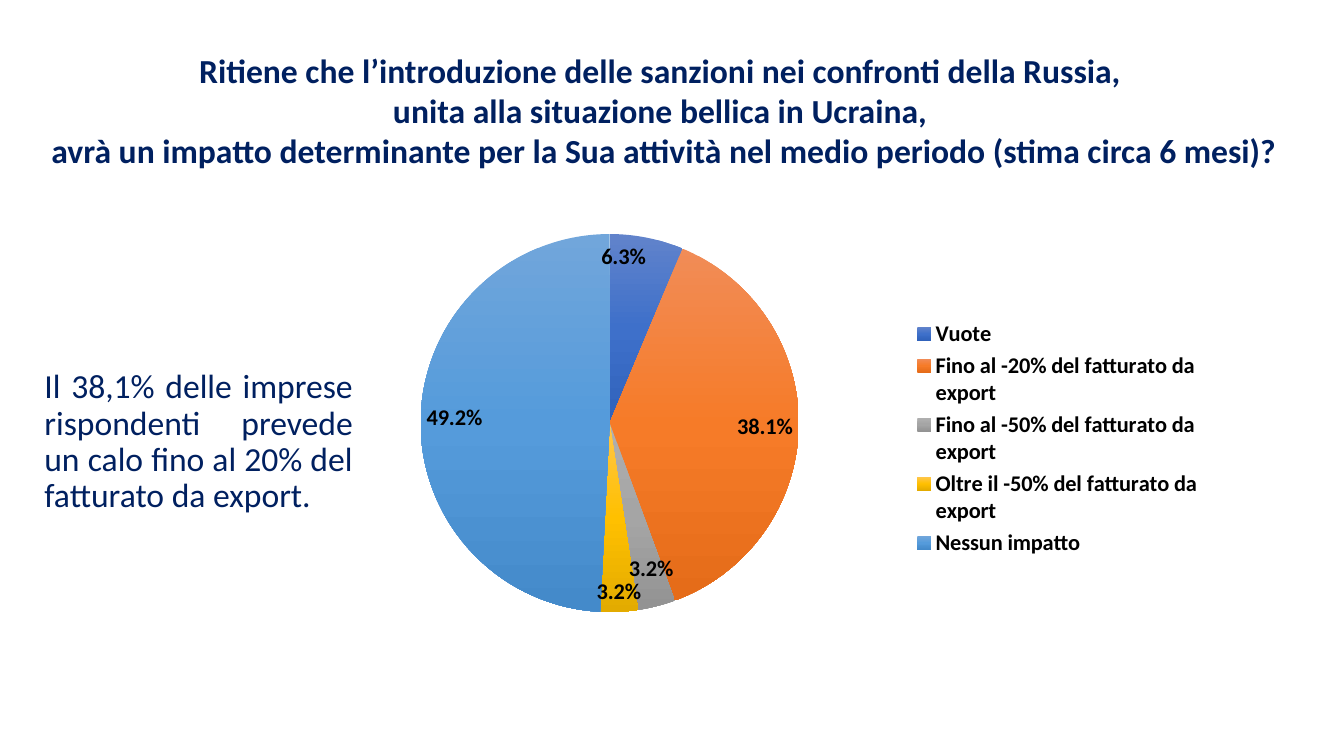
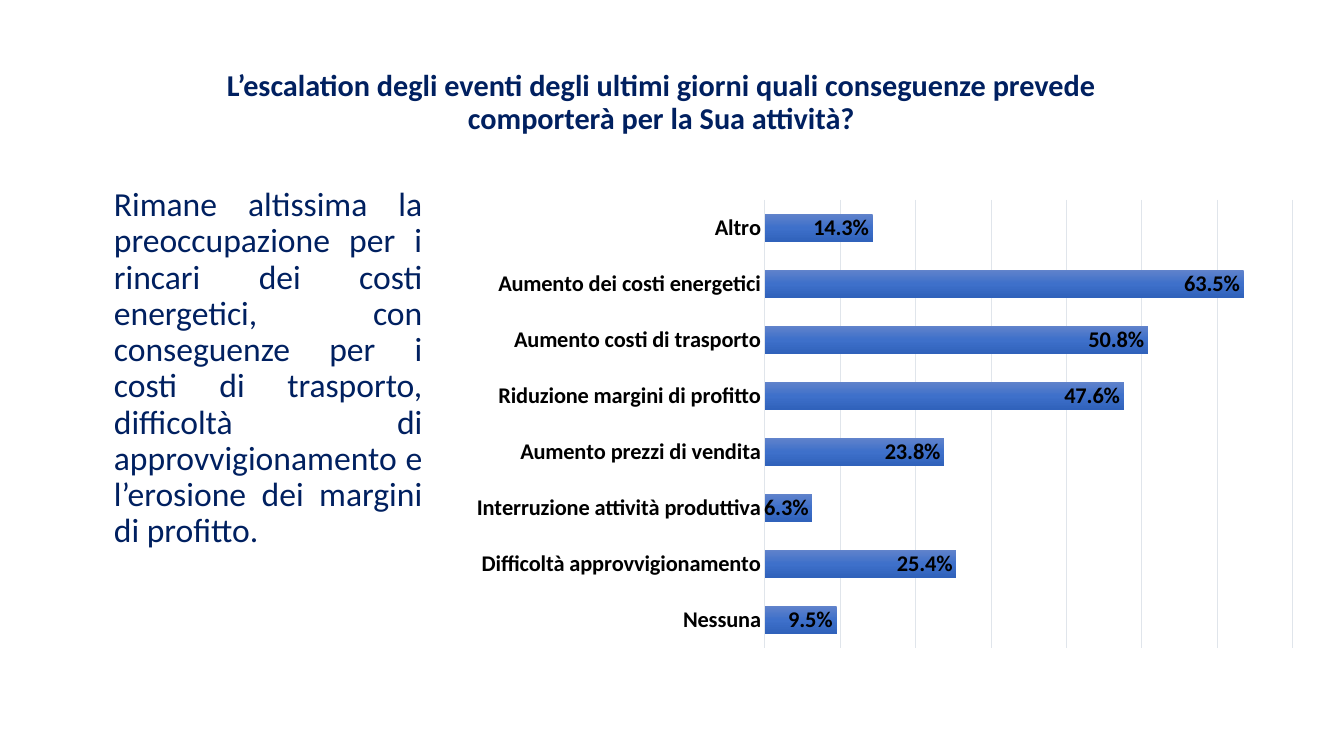
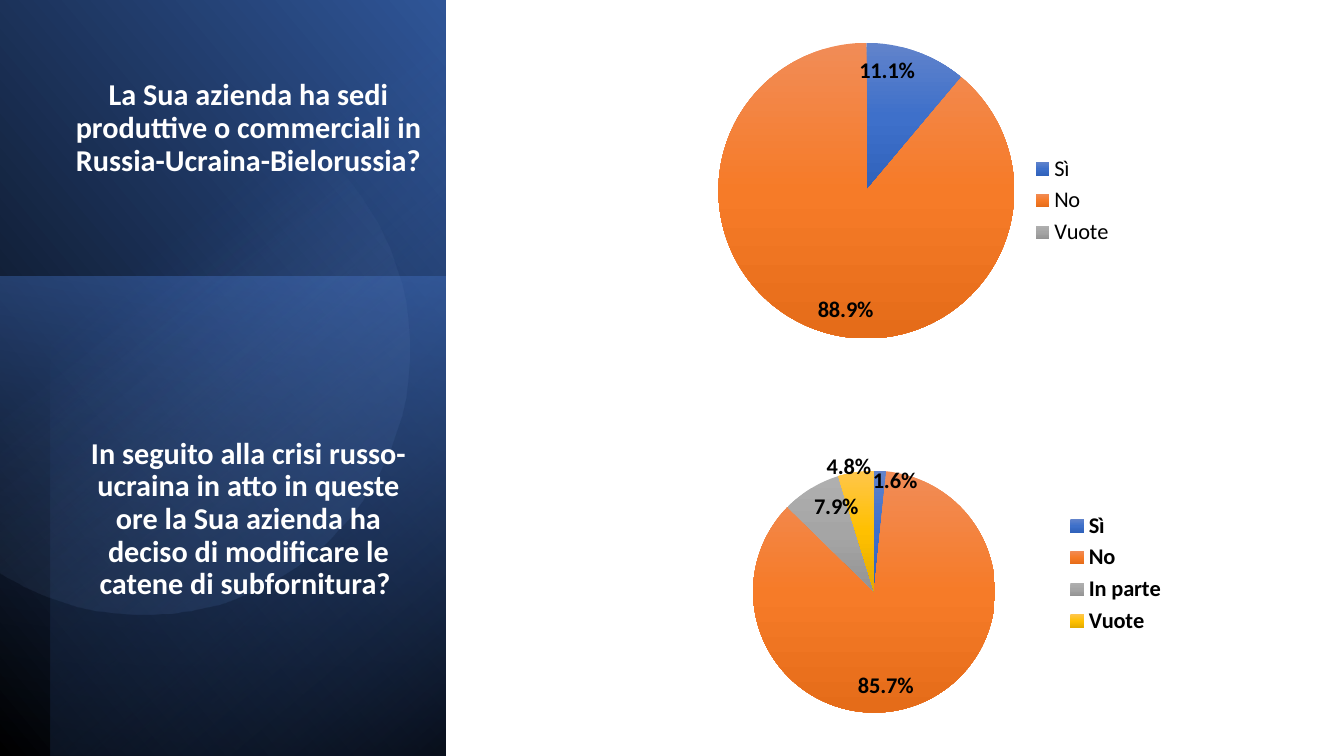
from math import acos, cos, sin

from lxml.etree import SubElement
from pptx import Presentation
from pptx.chart.data import CategoryChartData
from pptx.dml.color import RGBColor
from pptx.enum.chart import XL_CHART_TYPE, XL_LABEL_POSITION, XL_LEGEND_POSITION, XL_TICK_MARK
from pptx.enum.shapes import MSO_SHAPE
from pptx.enum.text import MSO_ANCHOR, MSO_AUTO_SIZE, PP_ALIGN
from pptx.oxml.ns import qn
from pptx.util import Pt

PX = 9144  # EMU in one px, 100 px to the inch
FONT = "Calibri"
COLORS = {"navy": "002060", "white": "FFFFFF", "black": "000000", "grid": "E0E5EB",
          "blue": "4472C4", "deep": "203864", "mid": "2F5597", "pale": "8FAADC"}
SLICES = [("6183CB", "3E70CA", "3062BB"), ("F18C57", "F67B28", "E56C19"),
          ("AFAFAF", "A5A5A5", "939393"), ("FFC64B", "FFC000", "E3AB00"),
          ("71A6DB", "559BDB", "448ACA")]


def gradient(fill, stops, angle):
    """Fill with (position %, hex, opacity %) stops; the angle runs clockwise."""
    fill.gradient()
    grad = fill._xPr.find(qn("a:gradFill"))
    stop_list = grad.find(qn("a:gsLst"))
    stop_list.clear()
    for pos, color, opacity in stops:
        gs = SubElement(stop_list, qn("a:gs"), pos=str(pos * 1000))
        clr = SubElement(gs, qn("a:srgbClr"), val=color)
        if opacity < 100:
            SubElement(clr, qn("a:alpha"), val=str(opacity * 1000))
    grad.find(qn("a:lin")).set("ang", str(round(angle * 60000)))


def write(sp, box, lines, size=24, color="navy", bold=False, align=PP_ALIGN.CENTER,
          anchor=MSO_ANCHOR.TOP, spacing=0.9, before=0, gap=0, wrap=True):
    """Place sp and fill it; before goes above the first paragraph, gap above the others."""
    sp.left, sp.top, sp.width, sp.height = [v * PX for v in box]
    tf = sp.text_frame
    tf.text = "\n".join(lines)
    tf.auto_size = MSO_AUTO_SIZE.NONE
    tf.word_wrap = wrap
    tf.vertical_anchor = anchor
    for i, p in enumerate(tf.paragraphs):
        p.alignment = align
        p.line_spacing = spacing
        p.space_before = Pt(gap if i else before)
        f = p.runs[0].font
        f.name, f.size, f.bold = FONT, Pt(size), bold
        f.color.rgb = RGBColor.from_string(COLORS[color])


prs = Presentation()
prs.slide_width, prs.slide_height = 1333 * PX, 750 * PX
title_and_text, title_only = prs.slide_layouts[0], prs.slide_layouts[5]
impact, effects, sites = [prs.slides.add_slide(layout) for layout in
                          (title_and_text, title_and_text, title_only)]

# Titles and comments of the first two slides
write(impact.shapes.title, (34, 44, 1249, 131),
      ["Ritiene che l’introduzione delle sanzioni nei confronti della Russia, ",
       "unita alla situazione bellica in Ucraina, ",
       "avrà un impatto determinante per la Sua attività nel medio periodo (stima circa 6 mesi)?"],
      bold=True, spacing=1.0, wrap=False)
write(effects.shapes.title, (156, 62, 1000, 78),
      ["L’escalation degli eventi degli ultimi giorni quali conseguenze prevede "
       "comporterà per la Sua attività?"],
      size=21.6, bold=True, anchor=MSO_ANCHOR.BOTTOM)
for s, left, top, comment in [
    (impact, 34, 362, "Il 38,1% delle imprese rispondenti prevede un calo fino al 20% "
                      "del fatturato da export."),
    (effects, 103, 181, "Rimane altissima la preoccupazione per i rincari dei costi energetici, "
                        "con conseguenze per i costi di trasporto, difficoltà di "
                        "approvvigionamento e l’erosione dei margini di profitto."),
]:
    write(s.placeholders[1], (left, top, 326, 388), [comment],
          align=PP_ALIGN.JUSTIFY, before=10)

# Side panel of the third slide: three turned rectangles and a clipped circle
panel = []
for box, rotation, flip, stops, angle in [
    ((-155, 155, 752, 442), 90, True,
     [(0, COLORS["black"], 100), (100, COLORS["mid"], 100)], 310),
    ((-17, 291, 476, 442), 270, False,
     [(0, COLORS["blue"], 50), (100, COLORS["deep"], 0)], 190),
    ((-129, 179, 750, 392), 270, True,
     [(0, COLORS["black"], 59), (69, COLORS["blue"], 0)], 220),
]:
    sp = sites.shapes.add_shape(MSO_SHAPE.RECTANGLE, *[v * PX for v in box])
    sp.rotation = rotation
    if flip:
        sp._element.spPr.find(qn("a:xfrm")).set("flipH", "1")
    panel.append((sp, stops, angle))

cx, cy, radius, steps = 143, 347, 263, 120
reach = acos(-cx / radius)
arc = [(cx + radius * cos(a), cy + radius * sin(a))
       for a in (reach * (2 * i / steps - 1) for i in range(steps + 1))]
builder = sites.shapes.build_freeform(*arc[0], scale=PX)
builder.add_line_segments(arc[1:], close=True)
panel.append((builder.convert_to_shape(),
              [(39, COLORS["pale"], 0), (100, COLORS["mid"], 26)], 51.6))

for sp, stops, angle in panel:
    gradient(sp.fill, stops, angle)
    sp.line.fill.background()
    sp.shadow.inherit = False

title = sites.shapes.title
write(title, (63, 74, 367, 336),
      ["La Sua azienda ha sedi produttive o commerciali in Russia-Ucraina-Bielorussia?",
       "In seguito alla crisi russo-ucraina in atto in queste ore la Sua azienda ha deciso "
       "di modificare le catene di subfornitura? "],
      size=21.6, color="white", bold=True, gap=186)
sites.shapes._spTree.append(title._element)  # in front of the panel

# Charts; a pie has its plot area and label shifts as fractions of the chart
for s, kind, box, legend_bold, plot_box, shifts, data in [
    (impact, XL_CHART_TYPE.PIE, (310, 217, 893, 436), True,
     (0.12, 0.03, 0.42, 0.87), {2: (0.02, -0.04)},
     {"Vuote": 0.063, "Fino al -20% del fatturato da export": 0.381,
      "Fino al -50% del fatturato da export": 0.032,
      "Oltre il -50% del fatturato da export": 0.032, "Nessun impatto": 0.492}),
    (effects, XL_CHART_TYPE.BAR_CLUSTERED, (456, 189, 843, 463), False, None, {},
     {"Nessuna": 0.095, "Difficoltà approvvigionamento": 0.254,
      "Interruzione attività produttiva": 0.063, "Aumento prezzi di vendita": 0.238,
      "Riduzione margini di profitto": 0.476, "Aumento costi di trasporto": 0.508,
      "Aumento dei costi energetici": 0.635, "Altro": 0.143}),
    (sites, XL_CHART_TYPE.PIE, (571, 36, 544, 326), False,
     (0.26, 0.02, 0.54, 0.9), {},
     {"Sì": 0.111, "No": 0.889, "Vuote": None}),
    (sites, XL_CHART_TYPE.PIE, (667, 419, 500, 300), True,
     (0.16, 0.16, 0.48, 0.8), {0: (0.03, -0.03), 3: (-0.06, -0.08)},
     {"Sì": 0.016, "No": 0.857, "In parte": 0.079, "Vuote": 0.048}),
]:
    chart_data = CategoryChartData(number_format="0.0%")
    chart_data.categories = list(data)
    chart_data.add_series("Series 1", list(data.values()))
    chart = s.shapes.add_chart(kind, *[v * PX for v in box], chart_data).chart
    is_pie = kind == XL_CHART_TYPE.PIE
    chart.has_title = False
    chart.has_legend = is_pie
    plot = chart.plots[0]
    plot.vary_by_categories = is_pie
    series = plot.series[0]
    labels = series.data_labels
    labels.show_value = True
    labels.position = XL_LABEL_POSITION.INSIDE_END
    labels.number_format, labels.number_format_is_linked = "0.0%", False
    fonts = [(chart.font, 10, False), (labels.font, 16, True)]
    layouts = []

    if is_pie:
        chart.legend.position = XL_LEGEND_POSITION.RIGHT
        chart.legend.include_in_layout = False
        fonts.append((chart.legend.font, 16, legend_bold))
        formats = [series.points[i].format for i in range(len(data))]
        plot_settings = {"layoutTarget": "inner", "xMode": "edge", "yMode": "edge"}
        plot_settings.update(zip("xywh", plot_box))
        layouts.append((".//c:plotArea", 0, plot_settings))
    else:
        formats = [series.format]
        plot.gap_width = 100
        cat, val = chart.category_axis, chart.value_axis
        cat.major_tick_mark = cat.minor_tick_mark = XL_TICK_MARK.NONE
        fonts.append((cat.tick_labels.font, 16, True))
        val.visible = False
        val.has_major_gridlines = True
        val.minimum_scale, val.maximum_scale, val.major_unit = 0, 0.7, 0.1
        for line in (cat.format.line, val.major_gridlines.format.line):
            line.color.rgb = RGBColor.from_string(COLORS["grid"])
            line.width = Pt(0.75)

    for i, shift in shifts.items():
        label = series.points[i].data_label
        label.position = XL_LABEL_POSITION.INSIDE_END
        fonts.append((label.font, 16, True))
        layouts.append((f".//c:dLbl[c:idx/@val='{i}']", 1, dict(zip("xy", shift))))

    for fmt, shades in zip(formats, SLICES):
        gradient(fmt.fill, [(50 * i, shade, 100) for i, shade in enumerate(shades)], 90)
        fmt.line.fill.background()
    for f, size, bold in fonts:
        f.name, f.size, f.bold = FONT, Pt(size), bold
        f.color.rgb = RGBColor.from_string(COLORS["black"])

    for query, index, settings in layouts:
        parent = chart._chartSpace.xpath(query)[0]
        for old in parent.findall(qn("c:layout")):
            parent.remove(old)
        layout = SubElement(parent, qn("c:layout"))
        manual = SubElement(layout, qn("c:manualLayout"))
        for tag, value in settings.items():
            SubElement(manual, qn("c:" + tag), val=str(value))
        parent.insert(index, layout)

prs.save("out.pptx")
